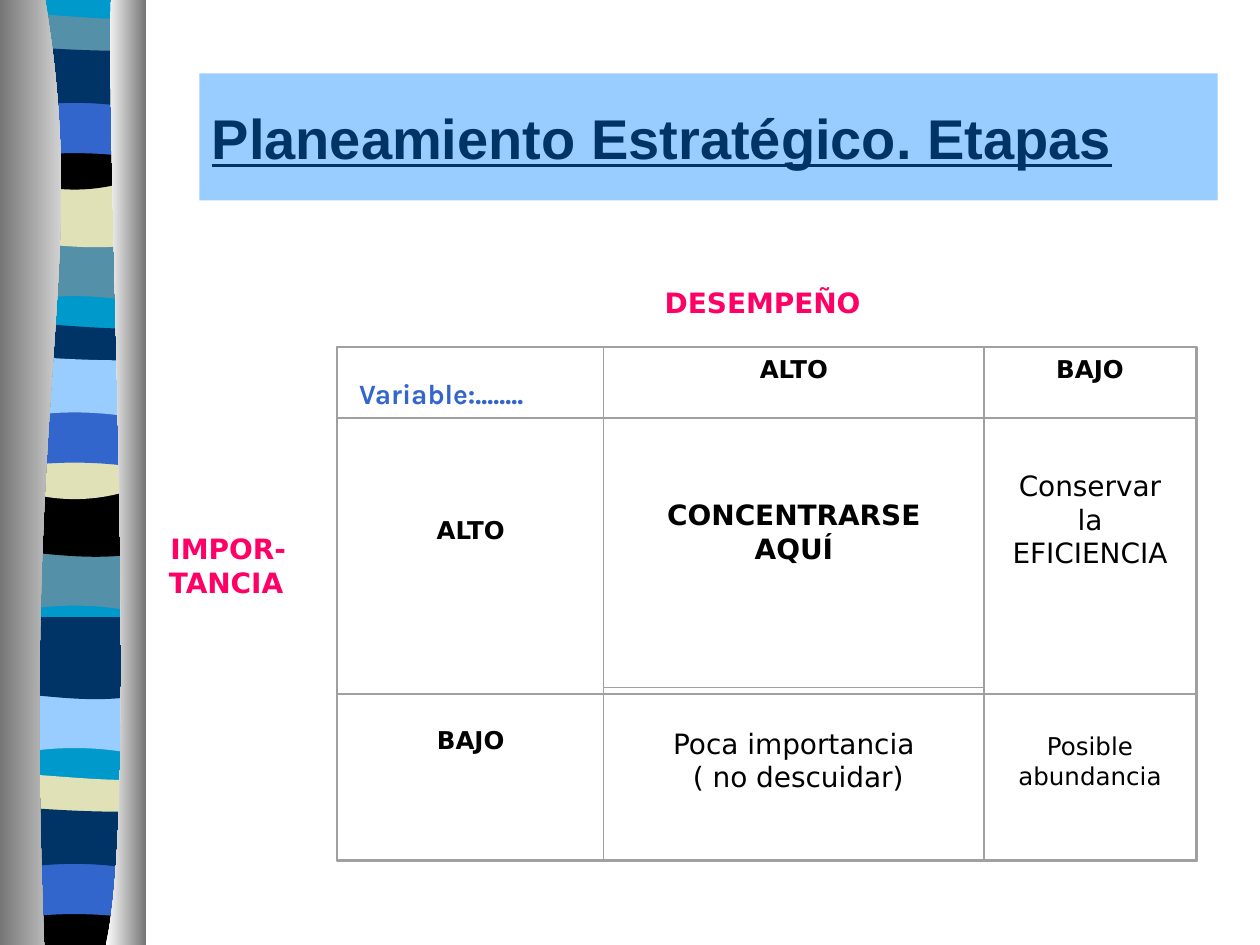
from pptx import Presentation
from pptx.dml.color import RGBColor
from pptx.enum.shapes import MSO_SHAPE
from pptx.enum.text import MSO_ANCHOR, PP_ALIGN
from pptx.oxml.ns import qn
from pptx.util import Cm, Pt
from lxml import etree

RECTANGLE = MSO_SHAPE.RECTANGLE
MIDDLE = MSO_ANCHOR.MIDDLE
LEFT, CENTER = PP_ALIGN.LEFT, PP_ALIGN.CENTER

PAGE_WIDTH, PAGE_HEIGHT = 25.4, 19.05
NAVY, BLUE, SKY, CYAN = "003366", "3366CC", "99CCFF", "0099CC"
STEEL, CREAM, BLACK = "5490A8", "E1E1B7", "000000"
PINK, GREY = "FF0066", "A0A0A0"
BODY_FONT = "DejaVu Sans"

WAVES = {
    "curtain": ((4.7, 4.7, 4.7, 4.7), (6.12, 5.92, 5.92, 6.12)),
    "swell": ((3.33, 3.33, 3.33, 3.33), (4.85, 4.93, 5.08, 4.9)),
    "slab": ((0.25, 0.28, 0.41, 0.38), (1.14, 1.27, 1.27, 1.14)),
    "pit": ((2.74, 2.74, 2.74, 2.74), (3.56, 3.91, 3.91, 3.56)),
    "arch": ((1.88, 1.88, 1.88, 1.88), (3.2, 3.05, 3.05, 3.2)),
    "sash": ((0.91, 0.99, 1.04, 1.02), (2.21, 2.03, 2.03, 2.21)),
}
WAVE_GROUPS = [
    (0, {"curtain": STEEL, "swell": CREAM, "slab": STEEL, "pit": BLACK, "arch": BLUE, "sash": NAVY}),
    (6.24, {"curtain": STEEL, "swell": BLACK, "slab": NAVY, "pit": CREAM, "arch": BLUE, "sash": SKY}),
    (9.11, {"curtain": SKY, "swell": NAVY}),
    (15.34, {"slab": CREAM, "pit": BLACK, "arch": BLUE, "sash": NAVY}),
]

COLUMN_WIDTHS = [5.36, 7.67, 4.27]
ROW_HEIGHTS = [1.42, 5.56, 3.35]
MATRIX_ROWS = [
    [None, ("ALTO", 14, True, 0, 1.42, 0.13), ("BAJO", 14, True, 0, 1.42, 0.13)],
    [("ALTO", 14, True, 1.3, 1.9, 0.65), ("CONCENTRARSE AQUÍ", 16, True, 1.42, 2.16, 0.19),
     ("Conservar la EFICIENCIA", 16, False, 0.86, 4.7, 0.16)],
    [("BAJO", 14, True, 0, 3.35, 0.62), ("Poca importancia\n ( no descuidar)", 16, False, 0, 3.35, 0.65),
     ("Posible abundancia", 14, False, 0, 3.35, 0.75)],
]


def color(hex_value):
    return RGBColor.from_string(hex_value)


def write(frame, text, size, hex_value, font=BODY_FONT, bold=False, underline=False, align=CENTER):
    frame.text = text
    frame.word_wrap = True
    for para in frame.paragraphs:
        para.alignment = align
        for span in para.runs:
            span.font.name = font
            span.font.size = Pt(size)
            span.font.bold = bold
            span.font.underline = underline
            span.font.color.rgb = color(hex_value)


def add_text(page, text, left, top, width, height, size, hex_value,
             margin_top=0.13, margin_left=0.25, **style):
    box = page.shapes.add_textbox(Cm(left), Cm(top), Cm(width), Cm(height))
    box.text_frame.margin_top = Cm(margin_top)
    box.text_frame.margin_left = Cm(margin_left)
    write(box.text_frame, text, size, hex_value, **style)


def add_outline(page, start, segments):
    points = [(Cm(x), Cm(y)) for segment in segments for x, y in segment]
    builder = page.shapes.build_freeform(Cm(start[0]), Cm(start[1]))
    builder.add_line_segments(points)
    shape = builder.convert_to_shape()
    shape.shadow.inherit = False
    shape.line.fill.background()
    steps = iter(list(shape._element.iter(qn("a:lnTo"))))
    for segment in segments:
        lines = [next(steps) for _ in segment]
        if len(lines) == 3:
            curve = etree.Element(qn("a:cubicBezTo"))
            lines[0].addprevious(curve)
            for line in lines:
                curve.append(line[0])
                line.getparent().remove(line)
    return shape


def add_band(page, left, width, upper, lower, hex_value):
    columns = [left + width * third / 3 for third in range(4)]
    top_edge = list(zip(columns, upper))
    bottom_edge = list(zip(columns, lower))[::-1]
    band = add_outline(page, top_edge[0], [top_edge[1:], bottom_edge[:1], bottom_edge[1:]])
    band.fill.solid()
    band.fill.fore_color.rgb = color(hex_value)


def add_ribbon(page, left, top, width, height):
    add_band(page, left, width, [top] * 4, [top + height] * 4, CYAN)
    for offset, bands in WAVE_GROUPS:
        for name, hex_value in bands.items():
            upper, lower = [[top + offset + y for y in edge] for edge in WAVES[name]]
            add_band(page, left, width, upper, lower, hex_value)


def add_pillar(page, outer, top, height, controls, shades):
    inner = [(outer + x, top + y * height) for x, y in controls]
    pillar = add_outline(page, inner[0],
                         [inner[1:], [(outer, top + height)], [(outer, top)]])
    pillar.fill.gradient()
    pillar.fill.gradient_angle = 0
    for stop, shade in zip(pillar.fill.gradient_stops, shades):
        stop.color.rgb = color(shade)


def add_side_panel(page, left, top, width, height):
    add_ribbon(page, left + 0.13, top, width - 0.19, height - 0.05)
    add_pillar(page, left, top, height,
               [(0.91, 0), (1.83, 0.29), (0.43, 0.39), (0.89, 1)], ("767676", "FFFFFF"))
    add_pillar(page, left + width, top, height,
               [(-0.7, 0), (-0.81, 0.17), (-0.12, 0.86), (-0.81, 1)], ("FFFFFF", "767676"))


def add_title(page, left, top, width, height):
    banner = page.shapes.add_shape(RECTANGLE, Cm(left), Cm(top), Cm(width), Cm(height))
    banner.shadow.inherit = False
    banner.fill.solid()
    banner.fill.fore_color.rgb = color(SKY)
    banner.line.fill.background()
    banner.text_frame.vertical_anchor = MIDDLE
    write(banner.text_frame, "Planeamiento Estratégico. Etapas", 32, NAVY,
          font="Arial", bold=True, underline=True, align=LEFT)


def add_frame(page, left, top, width, height, weight):
    frame = page.shapes.add_shape(RECTANGLE, Cm(left), Cm(top), Cm(width), Cm(height))
    frame.shadow.inherit = False
    frame.fill.background()
    frame.line.color.rgb = color(GREY)
    frame.line.width = Pt(weight)


def add_matrix(page, left, top):
    for r, (row, height) in enumerate(zip(MATRIX_ROWS, ROW_HEIGHTS)):
        y = top + sum(ROW_HEIGHTS[:r])
        for c, (entry, width) in enumerate(zip(row, COLUMN_WIDTHS)):
            x = left + sum(COLUMN_WIDTHS[:c])
            if entry:
                text, size, bold, offset, text_height, margin = entry
                add_text(page, text, x + 0.19, y + offset, width - 0.38, text_height,
                         size, BLACK, margin_top=margin, bold=bold)
            inset = 0.13 if r == c == 1 else 0
            add_frame(page, x, y, width, height - inset, 0)
    add_frame(page, left - 0.02, top - 0.02, sum(COLUMN_WIDTHS) + 0.04,
              sum(ROW_HEIGHTS) + 0.04, 1.12)
    add_text(page, "Variable:........", left + 0.18, top + 0.41, 5.28, 0.94, 16, BLUE,
             margin_top=0.17, font="Karla", bold=True, align=LEFT)


def main():
    deck = Presentation()
    deck.slide_width, deck.slide_height = Cm(PAGE_WIDTH), Cm(PAGE_HEIGHT)
    page = deck.slides.add_slide(deck.slide_layouts[6])
    add_side_panel(page, 0, 0, 2.94, PAGE_HEIGHT)
    add_text(page, "DESEMPEÑO", 1.7, 4.65, 21.79, 12.27, 16, PINK,
             margin_top=1.1, margin_left=5.81, bold=True)
    add_matrix(page, 6.81, 7.01)
    add_text(page, "IMPOR-TANCIA", 2.97, 10.59, 3.18, 2.12, 16, PINK, bold=True)
    add_title(page, 4.02, 1.48, 20.53, 2.56)
    deck.save("out.pptx")


if __name__ == "__main__":
    main()
